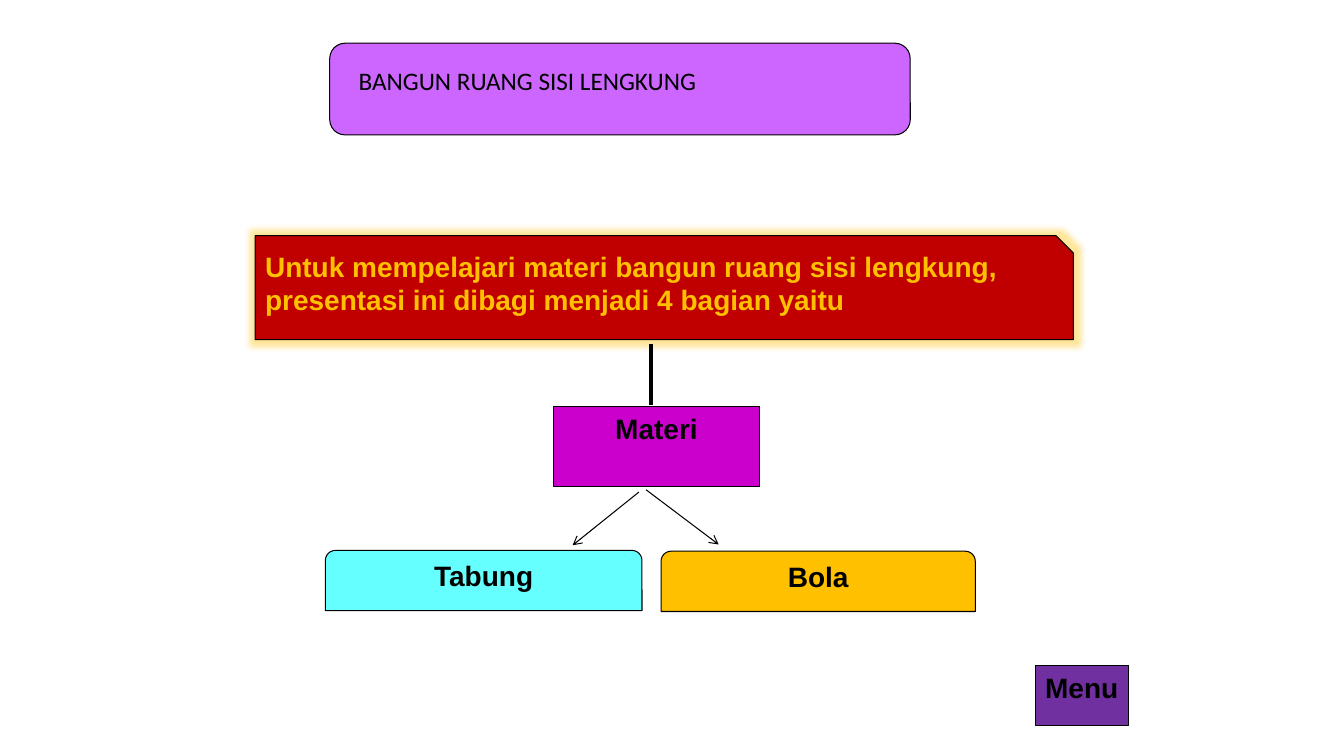
from lxml import etree
from pptx import Presentation
from pptx.dml.color import RGBColor
from pptx.enum.shapes import MSO_CONNECTOR, MSO_SHAPE as Shape
from pptx.enum.text import MSO_ANCHOR, MSO_AUTO_SIZE, PP_ALIGN as Align
from pptx.oxml.ns import qn
from pptx.util import Cm, Pt

COLORS = {
    "ink": "000000", "lilac": "CC66FF", "red": "C00000", "gold": "FFC000",
    "magenta": "CC00CC", "cyan": "66FFFF", "purple": "7030A0",
}


def rgb(name):
    return RGBColor.from_string(COLORS[name])


class Board:
    """Holds the slide and the shared text and outline style."""
    heading = {"name": "Arial", "size": Pt(20), "bold": True}
    title = {"name": "Calibri", "size": Pt(18), "bold": False}
    thin = Pt(0.75)

    def __init__(self, slide):
        self.shapes = slide.shapes

    def set_text(self, s, text, style, color="ink", align=Align.LEFT):
        tf = s.text_frame
        tf.word_wrap = True
        tf.vertical_anchor = MSO_ANCHOR.TOP
        p = tf.paragraphs[0]
        p.alignment = align
        r = p.add_run()
        r.text = text
        for key, value in style.items():
            setattr(r.font, key, value)
        r.font.color.rgb = rgb(color)

    def label(self, box, text):
        s = self.shapes.add_textbox(*map(Cm, box))
        self.set_text(s, text, self.title)
        s.text_frame.auto_size = MSO_AUTO_SIZE.SHAPE_TO_FIT_TEXT

    def box(self, kind, box, fill, text="", color="ink", align=Align.CENTER):
        s = self.shapes.add_shape(kind, *map(Cm, box))
        s.shadow.inherit = False
        s.fill.solid()
        s.fill.fore_color.rgb = rgb(fill)
        s.line.color.rgb = rgb("ink")
        s.line.width = self.thin
        if text:
            self.set_text(s, text, self.heading, color, align)
        return s

    def glow(self, s, color, radius, alpha):
        effects = s.element.spPr.find(qn("a:effectLst"))
        glow = etree.SubElement(effects, qn("a:glow"), rad=str(radius))
        clr = etree.SubElement(glow, qn("a:srgbClr"), val=COLORS[color])
        etree.SubElement(clr, qn("a:alpha"), val=str(alpha * 1000))

    def line(self, start, end, width=thin, arrow=False):
        s = self.shapes.add_connector(MSO_CONNECTOR.STRAIGHT, *map(Cm, start + end))
        s.line.color.rgb = rgb("ink")
        s.line.width = width
        spPr = s.element.spPr
        if arrow:
            etree.SubElement(spPr.find(qn("a:ln")), qn("a:tailEnd"), type="arrow")
        etree.SubElement(spPr, qn("a:effectLst"))


def main():
    prs = Presentation()
    prs.slide_width, prs.slide_height = Cm(33.87), Cm(19.05)
    board = Board(prs.slides.add_slide(prs.slide_layouts[6]))

    board.box(Shape.ROUNDED_RECTANGLE, (8.31, 1.09, 14.63, 2.31), "lilac")
    board.label((8.79, 1.52, 13.44, 1.02), "BANGUN RUANG SISI LENGKUNG")

    intro = board.box(
        Shape.SNIP_1_RECTANGLE, (6.43, 5.94, 20.62, 2.62), "red",
        "Untuk mempelajari materi bangun ruang sisi lengkung, "
        "presentasi ini dibagi menjadi 4 bagian yaitu", "gold", Align.LEFT)
    board.glow(intro, "gold", Pt(8), 40)

    board.box(Shape.RECTANGLE, (13.94, 10.24, 5.21, 2.01), "magenta", "Materi")
    board.line((16.41, 8.66), (16.41, 10.21), Pt(3))
    board.line((16.28, 12.34), (18.11, 13.72), arrow=True)
    board.line((16.1, 12.4), (14.43, 13.74), arrow=True)

    for text, fill, place in (("Bola", "gold", (16.66, 13.89, 7.92, 1.52)),
                              ("Tabung", "cyan", (8.2, 13.87, 7.98, 1.52))):
        board.box(Shape.ROUND_2_SAME_RECTANGLE, place, fill, text)

    board.box(Shape.RECTANGLE, (26.09, 16.76, 2.36, 1.52), "purple", "Menu",
              align=Align.LEFT)
    prs.save("out.pptx")


if __name__ == "__main__":
    main()
